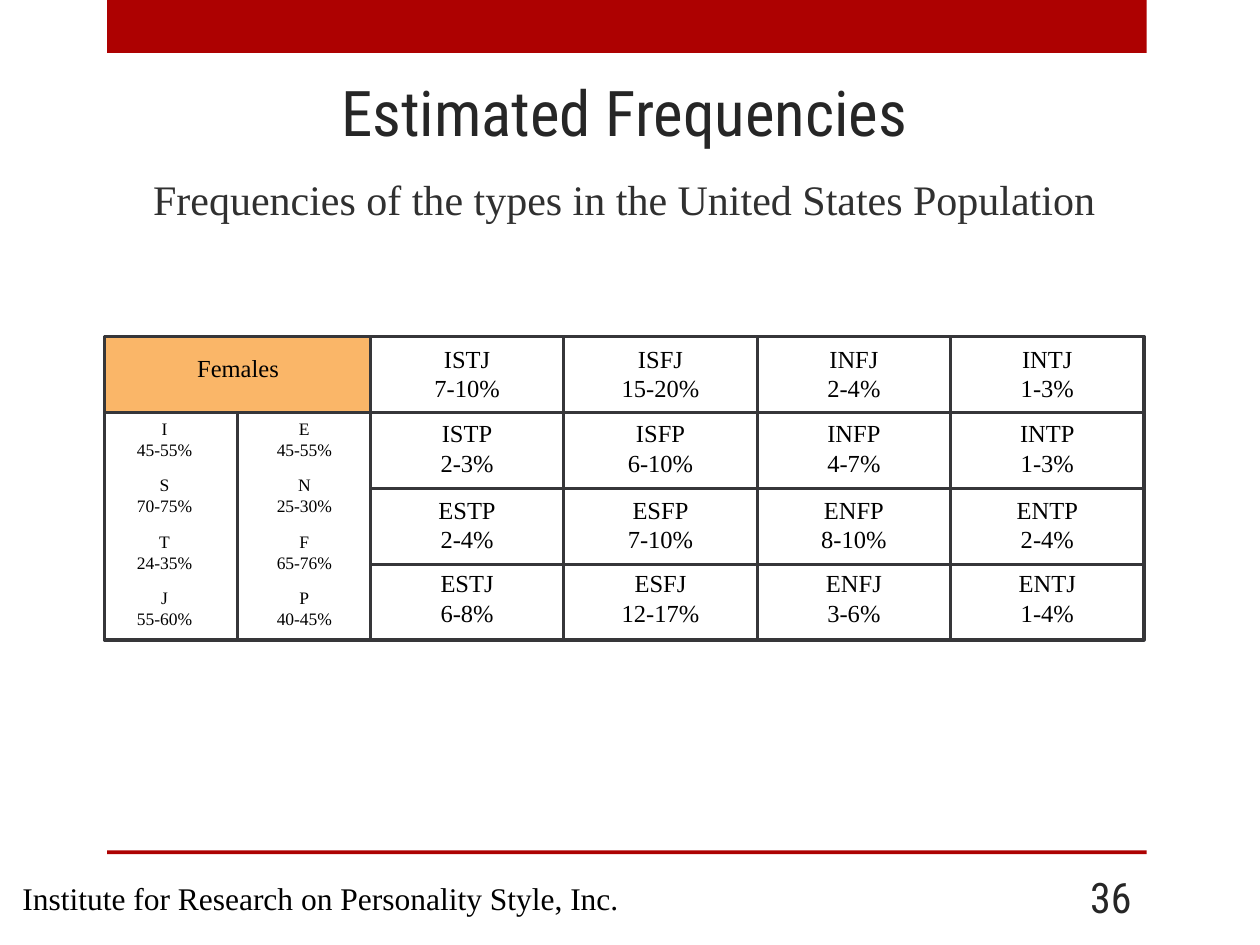
from pptx import Presentation
from pptx.dml.color import RGBColor
from pptx.enum.shapes import MSO_SHAPE
from pptx.enum.text import MSO_ANCHOR, MSO_AUTO_SIZE, PP_ALIGN
from pptx.util import Inches, Pt

RECT = MSO_SHAPE.RECTANGLE
LEFT, CENTER, RIGHT = PP_ALIGN.LEFT, PP_ALIGN.CENTER, PP_ALIGN.RIGHT
TOP, MIDDLE = MSO_ANCHOR.TOP, MSO_ANCHOR.MIDDLE
FIT = MSO_AUTO_SIZE.SHAPE_TO_FIT_TEXT

RED = RGBColor(0xAD, 0x01, 0x01)
ORANGE = RGBColor(0xFA, 0xB6, 0x68)
WHITE = RGBColor(0xFF, 0xFF, 0xFF)
BLACK = RGBColor(0, 0, 0)
DARK = RGBColor(0x26, 0x26, 0x26)
GRAY = RGBColor(0x30, 0x30, 0x30)
EDGE = RGBColor(0x36, 0x36, 0x39)

SERIF = "Times New Roman"
SANS = "Roboto Condensed"

GRID_X, GRID_Y = 0.83, 2.67
PAIR_W = 2.11 / 2
TYPE_X = GRID_X + 2 * PAIR_W
TYPE_W, ROW_H = 6.14 / 4, 2.41 / 4
LABEL_W = 0.9

TYPES = [
    [("ISTJ", "7-10%"), ("ISFJ", "15-20%"), ("INFJ", "2-4%"), ("INTJ", "1-3%")],
    [("ISTP", "2-3%"), ("ISFP", "6-10%"), ("INFP", "4-7%"), ("INTP", "1-3%")],
    [("ESTP", "2-4%"), ("ESFP", "7-10%"), ("ENFP", "8-10%"), ("ENTP", "2-4%")],
    [("ESTJ", "6-8%"), ("ESFJ", "12-17%"), ("ENFJ", "3-6%"), ("ENTJ", "1-4%")],
]
TYPE_TOPS = [2.68, 3.27, 3.88, 4.46]
PAIRS = [
    (0.98, [("I", "45-55%"), ("S", "70-75%"), ("T", "24-35%"), ("J", "55-60%")]),
    (2.09, [("E", "45-55%"), ("N", "25-30%"), ("F", "65-76%"), ("P", "40-45%")]),
]
PAIR_STEP = 1.34 / 3


def add_rect(slide, x, y, w, h, fill, edge=None):
    rect = slide.shapes.add_shape(RECT, Inches(x), Inches(y), Inches(w), Inches(h))
    rect.shadow.inherit = False
    rect.fill.solid()
    rect.fill.fore_color.rgb = fill
    if edge is None:
        rect.line.fill.background()
    else:
        rect.line.color.rgb = edge
        rect.line.width = Pt(1.75)


def fill_text(frame, lines, size, font, color, align, anchor):
    frame.vertical_anchor = anchor
    for i, line in enumerate(lines):
        para = frame.paragraphs[0] if i == 0 else frame.add_paragraph()
        para.alignment = align
        run = para.add_run()
        run.text = line
        run.font.size = Pt(size)
        run.font.name = font
        run.font.color.rgb = color


def add_text(shapes, x, y, w, h, lines, size, font=SERIF, color=BLACK,
             align=CENTER, anchor=TOP, wrap=True):
    box = shapes.add_textbox(Inches(x), Inches(y), Inches(w), Inches(h))
    frame = box.text_frame
    frame.word_wrap = wrap
    if not wrap:
        frame.auto_size = FIT
    fill_text(frame, lines, size, font, color, align, anchor)
    return box


def add_title(slide, text):
    title = slide.shapes.title
    title.left, title.top = Inches(0.83), Inches(0.52)
    title.width, title.height = Inches(8.25), Inches(0.72)
    fill_text(title.text_frame, [text], 36, SANS, DARK, CENTER, MIDDLE)


def add_cells(slide):
    add_rect(slide, GRID_X, GRID_Y, 2 * PAIR_W, ROW_H, ORANGE, EDGE)
    for col in range(2):
        add_rect(slide, GRID_X + col * PAIR_W, GRID_Y + ROW_H,
                 PAIR_W, 3 * ROW_H, WHITE, EDGE)
    for row in range(4):
        for col in range(4):
            add_rect(slide, TYPE_X + col * TYPE_W, GRID_Y + row * ROW_H,
                     TYPE_W, ROW_H, WHITE, EDGE)


def add_labels(slide):
    for top, row in zip(TYPE_TOPS, TYPES):
        for col, lines in enumerate(row):
            x = TYPE_X + col * TYPE_W + (TYPE_W - LABEL_W) / 2
            add_text(slide.shapes, x, top, LABEL_W, 0.57, lines, 14, wrap=False)
    for x, items in PAIRS:
        group = slide.shapes.add_group_shape()
        for i, lines in enumerate(items):
            add_text(group.shapes, x, 3.27 + i * PAIR_STEP, 0.65, 0.44,
                     lines, 10, wrap=False)
    add_text(slide.shapes, 1.46, 2.75, 0.86, 0.34, ["Females"], 14, wrap=False)


def main():
    deck = Presentation()
    deck.slide_width, deck.slide_height = Inches(10), Inches(7.5)
    slide = deck.slides.add_slide(deck.slide_layouts[5])

    add_rect(slide, 0.85, 0, 8.25, 0.42, RED)
    add_rect(slide, 0.85, 6.75, 8.25, 0.03, RED)
    add_title(slide, "Estimated Frequencies")
    intro = add_text(slide.shapes, 0.83, 1.33, 8.25, 0.58,
                     ["Frequencies of the types in the United States Population"],
                     24, color=GRAY)
    intro.text_frame.paragraphs[0].space_before = Pt(4.8)
    add_cells(slide)
    add_labels(slide)
    add_text(slide.shapes, 0.08, 6.93, 5.83, 0.4,
             ["Institute for Research on Personality Style, Inc."], 18, align=LEFT)
    add_text(slide.shapes, 8.25, 6.92, 0.83, 0.4, ["36"], 24, SANS, DARK,
             RIGHT, MIDDLE)
    deck.save("out.pptx")


if __name__ == "__main__":
    main()
